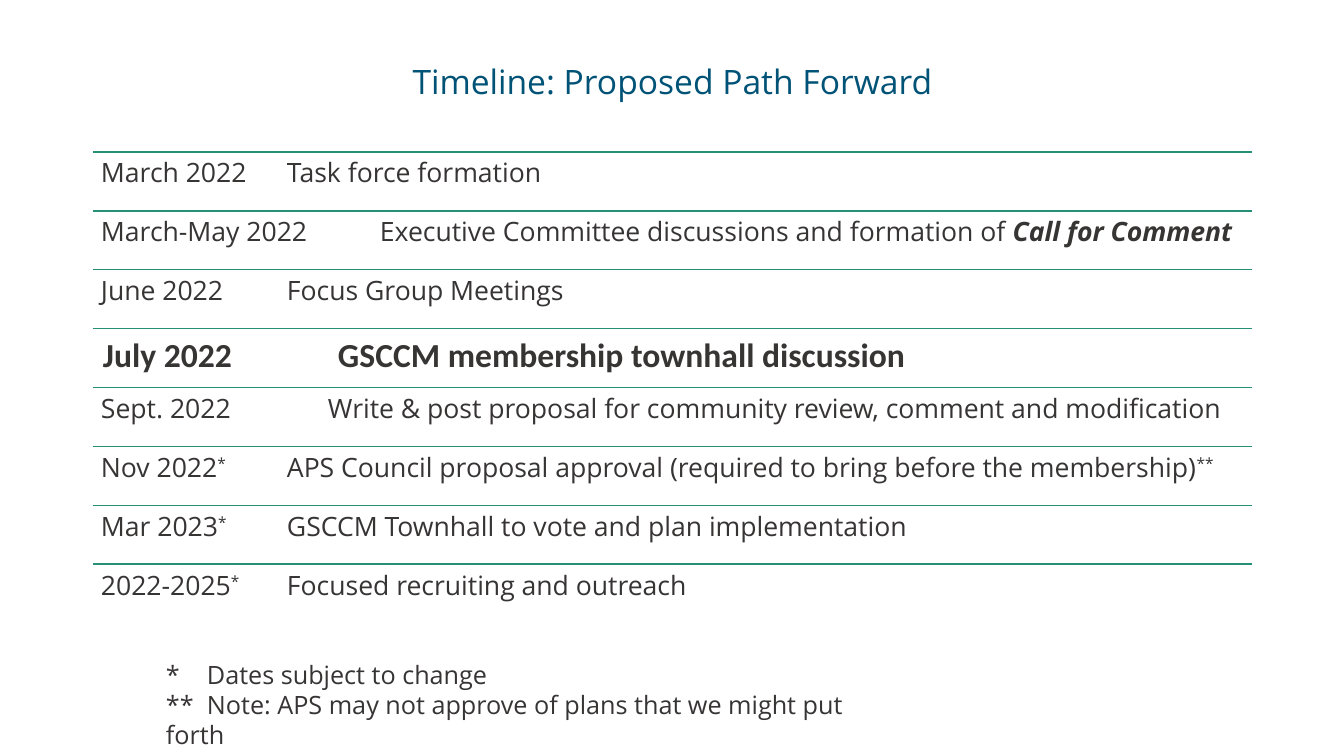
from dataclasses import dataclass

import pptx
import pptx.dml.color
import pptx.enum.shapes
import pptx.enum.text
import pptx.oxml
import pptx.oxml.ns
import pptx.util

EMU_PER_PX = 914400 / 100.8
SLIDE_SIZE = (1344, 756)
LIST_LEFT, LIST_TOP, LIST_WIDTH, LIST_HEIGHT = 93, 152, 1159, 471
DATE_TAB = 186


@dataclass(frozen=True)
class Theme:
    font: str = "Open Sans"
    highlight_font: str = "Calibri"
    title_color: str = "005376"
    text_color: str = "373434"
    rule_color: str = "269077"
    title_size: int = 24
    row_size: int = 19
    highlight_size: int = 24
    note_size: int = 18


THEME = Theme()
BODY = {"name": THEME.font, "size": pptx.util.Pt(THEME.row_size)}
HIGHLIGHT = {"name": THEME.highlight_font, "bold": True,
             "size": pptx.util.Pt(THEME.highlight_size)}
NOTE = {"name": THEME.font, "size": pptx.util.Pt(THEME.note_size)}
TITLE = {"name": THEME.font, "size": pptx.util.Pt(THEME.title_size)}
STRONG = {"bold": True, "italic": True}
RAISED = {"baseline": "30000"}

# Each row: tab position, inset, base format, then (text, extra format) runs.
ROWS = [
    (DATE_TAB, 8, BODY, [("March 2022\tTask force formation", {})]),
    (279, 8, BODY, [
        ("March-May 2022\tExecutive Committee discussions and formation of ", {}),
        ("Call for Comment", STRONG)]),
    (DATE_TAB, 8, BODY, [("June 2022\tFocus Group Meetings", {})]),
    (235, 10, HIGHLIGHT, [("July 2022\tGSCCM membership townhall discussion", {})]),
    (227, 8, BODY, [
        ("Sept. 2022\tWrite & post proposal for community review, "
         "comment and modification", {})]),
    (DATE_TAB, 8, BODY, [
        ("Nov 2022", {}), ("*", RAISED),
        ("\tAPS Council proposal approval (required to bring before the membership)", {}),
        ("**", RAISED)]),
    (DATE_TAB, 8, BODY, [
        ("Mar 2023", {}), ("*", RAISED),
        ("\tGSCCM Townhall to vote and plan implementation", {})]),
    (DATE_TAB, 8, BODY, [
        ("2022-2025", {}), ("*", RAISED),
        ("\tFocused recruiting and outreach", {})]),
]
NOTES = [
    "*\tDates subject to change",
    "**\tNote: APS may not approve of plans that we might put forth",
]


def px(length):
    return pptx.util.Emu(round(length * EMU_PER_PX))


def add_run(paragraph, text, formats, color=THEME.text_color):
    run = paragraph.add_run()
    run.text = text
    run.font.color.rgb = pptx.dml.color.RGBColor.from_string(color)
    for name, value in formats.items():
        if name == "baseline":
            run.font._element.set(name, value)
        else:
            setattr(run.font, name, value)


def add_tab(paragraph, position):
    properties = paragraph._p.get_or_add_pPr()
    tabs = pptx.oxml.parse_xml(
        f'<a:tabLst {pptx.oxml.ns.nsdecls("a")}>'
        f'<a:tab pos="{px(position)}" algn="l"/></a:tabLst>')
    properties.append(tabs)


def set_frame(frame, inset, anchor):
    frame.word_wrap = True
    frame.vertical_anchor = anchor
    for side in ("left", "top", "right", "bottom"):
        setattr(frame, f"margin_{side}", px(inset))


def add_title(slide, text):
    title = slide.shapes.title
    for name, length in {"left": 121, "top": 46, "width": 1103, "height": 76}.items():
        setattr(title, name, px(length))
    set_frame(title.text_frame, 0, pptx.enum.text.MSO_ANCHOR.MIDDLE)
    paragraph = title.text_frame.paragraphs[0]
    paragraph.alignment = pptx.enum.text.PP_ALIGN.CENTER
    paragraph.line_spacing = 0.9
    add_run(paragraph, text, TITLE, THEME.title_color)


def add_rule(shapes, top):
    rule = shapes.add_connector(
        pptx.enum.shapes.MSO_CONNECTOR.STRAIGHT,
        px(LIST_LEFT), px(top), px(LIST_LEFT + LIST_WIDTH), px(top))
    rule.line.color.rgb = pptx.dml.color.RGBColor.from_string(THEME.rule_color)
    rule.line.width = pptx.util.Pt(1)
    rule._element.spPr.append(pptx.oxml.parse_xml(
        f'<a:effectLst {pptx.oxml.ns.nsdecls("a")}/>'))


def add_row(shapes, top, height, row):
    tab, inset, base, runs = row
    add_rule(shapes, top)
    box = shapes.add_textbox(px(LIST_LEFT), px(top), px(LIST_WIDTH), px(height))
    set_frame(box.text_frame, inset, pptx.enum.text.MSO_ANCHOR.TOP)
    paragraph = box.text_frame.paragraphs[0]
    add_tab(paragraph, tab)
    paragraph.line_spacing = 0.9
    for text, extra in runs:
        add_run(paragraph, text, {**base, **extra})


def add_timeline(slide):
    group = slide.shapes.add_group_shape()
    pitch = LIST_HEIGHT / len(ROWS)
    for index, row in enumerate(ROWS):
        add_row(group.shapes, LIST_TOP + index * pitch, pitch, row)


def add_notes(slide):
    box = slide.shapes.add_textbox(px(156), px(654), px(747), px(72))
    frame = box.text_frame
    frame.word_wrap = True
    for index, text in enumerate(NOTES):
        paragraph = frame.add_paragraph() if index else frame.paragraphs[0]
        add_tab(paragraph, 41)
        add_run(paragraph, text, NOTE)


def main():
    presentation = pptx.Presentation()
    presentation.slide_width, presentation.slide_height = map(px, SLIDE_SIZE)
    slide = presentation.slides.add_slide(
        presentation.slide_layouts.get_by_name("Title Only"))
    add_title(slide, "Timeline: Proposed Path Forward")
    add_timeline(slide)
    add_notes(slide)
    presentation.save("out.pptx")


if __name__ == "__main__":
    main()
